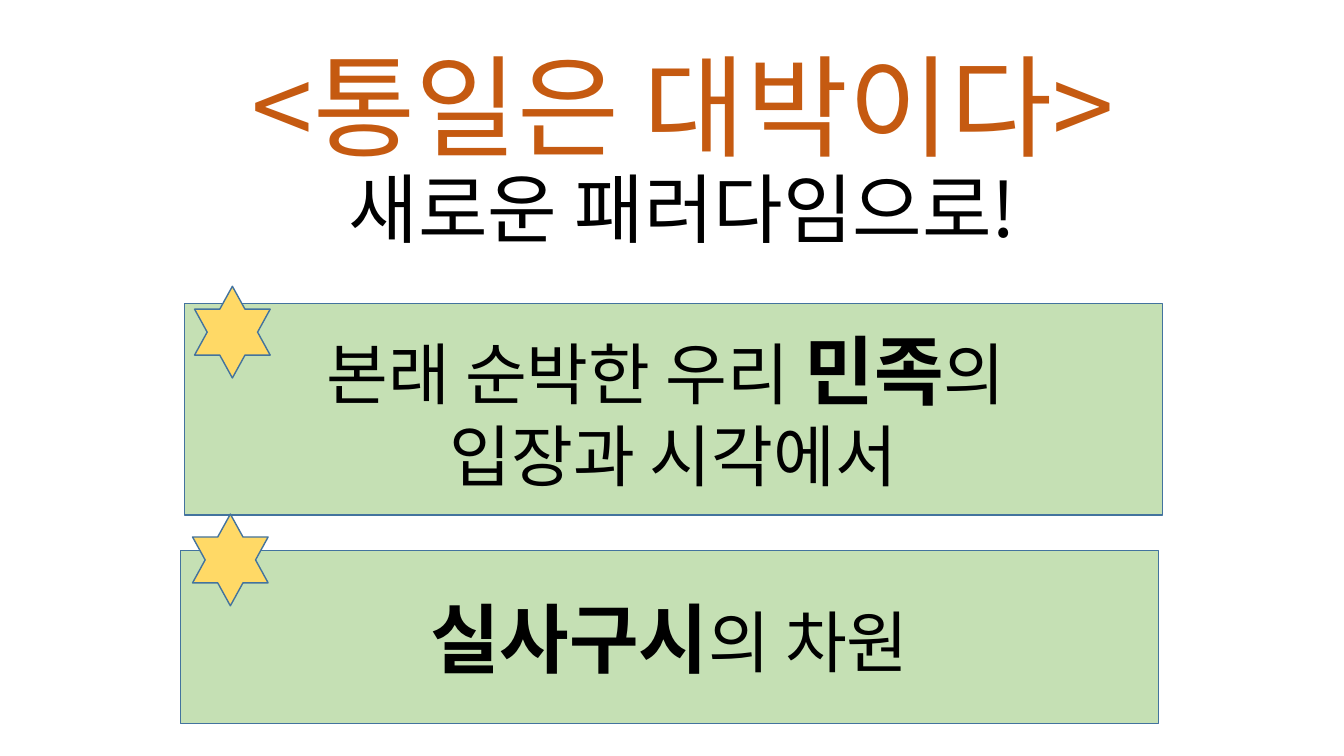
from lxml.etree import SubElement
from pptx import Presentation
from pptx.dml.color import RGBColor
from pptx.enum.shapes import MSO_SHAPE as Shape
from pptx.enum.text import MSO_ANCHOR as Anchor, PP_ALIGN as Align
from pptx.oxml.ns import qn
from pptx.util import Inches, Pt

FONT = "Noto Sans CJK KR"
COLORS = {
    "title": "C55A11",
    "text": "000000",
    "panel": "C5E0B4",
    "star": "FFD966",
    "outline": "43739E",
}

TITLE_BOX = (1.41, 0.27, 10.72, 2.3)
TITLE = [[("<통일은 대박이다>", 79.2, False, "title"), "\n",
          ("새로운 패러다임으로!", 54, False, "text")]]

PANELS = [
    ((1.83, 3.01, 9.7, 2.1), [
        [("본래 순박한 우리 ", 48, False, "text"),
         ("민족", 54, True, "text"),
         ("의 ", 48, False, "text")],
        [("입장과 시각에서", 48, False, "text")],
    ]),
    ((1.79, 5.46, 9.7, 1.72), [
        [("실사구시", 54, True, "text"),
         ("의 차원", 48, False, "text")],
    ]),
]
STARS = [(1.93, 2.84), (1.91, 5.1)]
STAR_SIZE = (0.75, 0.91)


def color(name):
    return RGBColor.from_string(COLORS[name])


def write(frame, paragraphs, anchor, spacing=1.0):
    frame.word_wrap = True
    frame.vertical_anchor = anchor
    for index, runs in enumerate(paragraphs):
        paragraph = frame.add_paragraph() if index else frame.paragraphs[0]
        paragraph.alignment = Align.CENTER
        paragraph.line_spacing = spacing
        for item in runs:
            if item == "\n":
                paragraph.add_line_break()
                continue
            text, size, bold, tint = item
            run = paragraph.add_run()
            run.text = text
            run.font.size = Pt(size)
            run.font.bold = bold
            run.font.color.rgb = color(tint)
            run.font.name = FONT
            SubElement(run.font._element, qn("a:ea"), typeface=FONT)


def add_figure(slide, kind, box, fill):
    shape = slide.shapes.add_shape(kind, *map(Inches, box))
    shape.shadow.inherit = False
    shape.fill.solid()
    shape.fill.fore_color.rgb = color(fill)
    shape.line.color.rgb = color("outline")
    shape.line.width = Pt(1)
    return shape


def main():
    presentation = Presentation()
    presentation.slide_width = Inches(13.33)
    presentation.slide_height = Inches(7.5)
    slide = presentation.slides.add_slide(presentation.slide_layouts[6])

    title = slide.shapes.add_textbox(*map(Inches, TITLE_BOX))
    write(title.text_frame, TITLE, Anchor.BOTTOM, 0.9)
    for box, paragraphs in PANELS:
        panel = add_figure(slide, Shape.RECTANGLE, box, "panel")
        write(panel.text_frame, paragraphs, Anchor.MIDDLE)
    for corner in STARS:
        add_figure(slide, Shape.STAR_6_POINT, corner + STAR_SIZE, "star")

    presentation.save("out.pptx")


if __name__ == "__main__":
    main()
